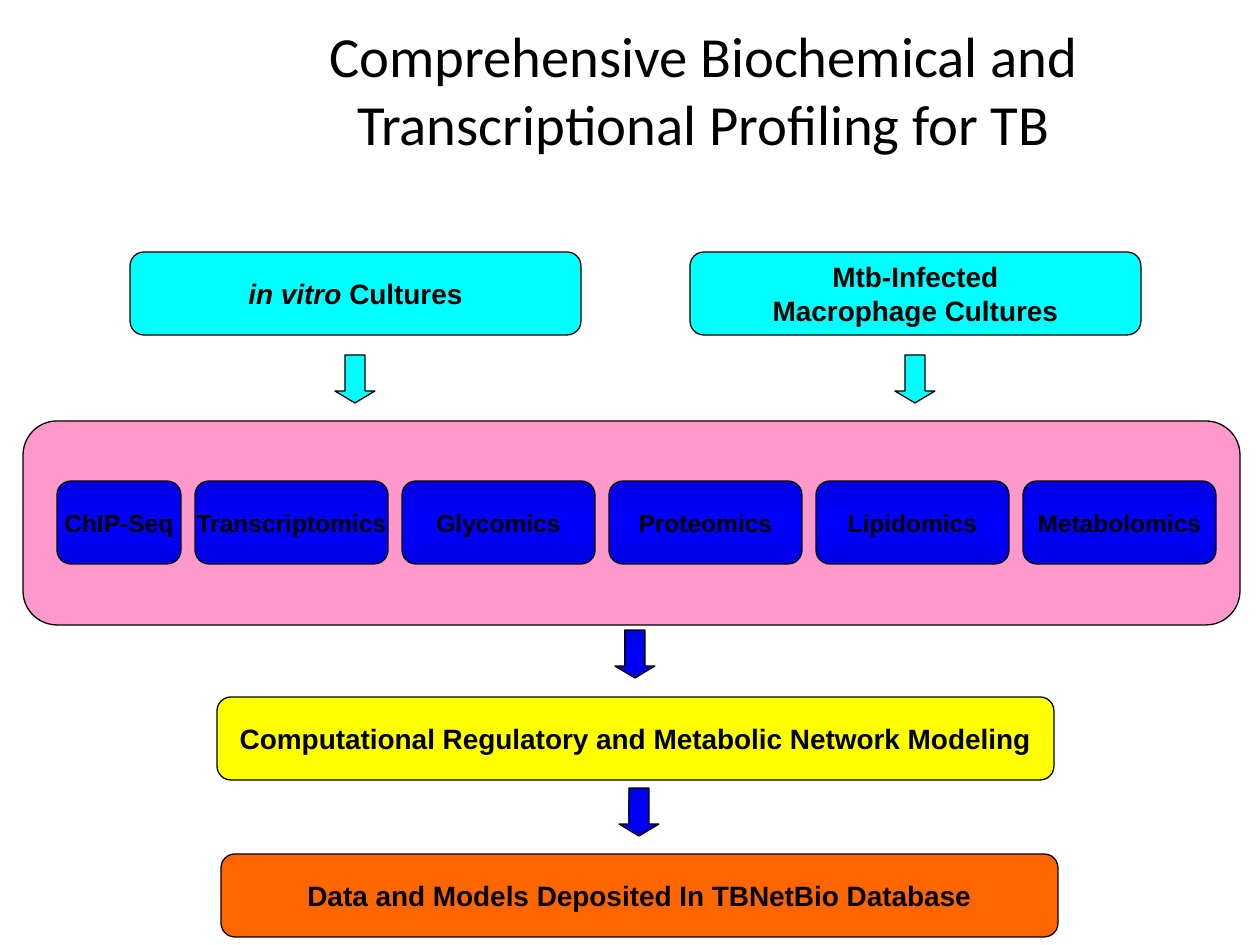
from copy import deepcopy
from dataclasses import dataclass

from pptx import Presentation
from pptx import util as u
from pptx.dml.color import RGBColor
from pptx.enum import shapes, text

EMU_PER_PX = 914400 // 126
BOX_HEIGHT = 83


@dataclass(frozen=True)
class Theme:
    ink: str = "000000"
    culture: str = "00FFFF"
    panel: str = "FF99CC"
    modeling: str = "FFFF00"
    database: str = "FF6600"
    assay: tuple = ("0000E2", "0000FF", "0000E2")
    flow: tuple = ("0000E0", "0000FF", "0000E0")
    title_font: str = "Calibri"
    body_font: str = "Arial"
    title_size: float = 32.4
    box_size: int = 16
    assay_size: int = 14
    line_width: float = 0.75


THEME = Theme()


def px(length):
    return u.Emu(length * EMU_PER_PX)


def rgb(value):
    return RGBColor.from_string(value)


def set_gradient(shape, colors):
    """Fill with three evenly spaced colours from top to bottom."""
    shape.fill.gradient()
    shape.fill.gradient_angle = 90
    stop_list = shape._element.xpath("./p:spPr/a:gradFill/a:gsLst")[0]
    stop_list.insert(1, deepcopy(stop_list[0]))
    for index, (stop, color) in enumerate(zip(shape.fill.gradient_stops, colors)):
        stop.color.rgb = rgb(color)
        stop.position = index / 2


def add_preset(slide, kind, box, fill, adjustments):
    shape = slide.shapes.add_shape(kind, *map(px, box))
    shape.shadow.inherit = False
    for index, value in enumerate(adjustments):
        shape.adjustments[index] = value
    if isinstance(fill, tuple):
        set_gradient(shape, fill)
    else:
        shape.fill.solid()
        shape.fill.fore_color.rgb = rgb(fill)
    shape.line.color.rgb = rgb(THEME.ink)
    shape.line.width = u.Pt(THEME.line_width)
    return shape


def add_run(paragraph, words, font, size, bold=False, italic=False):
    run = paragraph.add_run()
    run.text = words
    run.font.name = font
    run.font.size = u.Pt(size)
    run.font.bold = bold
    run.font.italic = italic
    run.font.color.rgb = rgb(THEME.ink)


def add_box(slide, box, fill, lines=(), size=THEME.box_size):
    """Add a rounded box; each line is a list of (words, italic) runs."""
    shape = add_preset(slide, shapes.MSO_SHAPE.ROUNDED_RECTANGLE, box, fill, [0.167])
    frame = shape.text_frame
    frame.word_wrap = False
    frame.vertical_anchor = text.MSO_ANCHOR.MIDDLE
    for index, line in enumerate(lines):
        paragraph = frame.add_paragraph() if index else frame.paragraphs[0]
        paragraph.alignment = text.PP_ALIGN.CENTER
        for words, italic in line:
            add_run(paragraph, words, THEME.body_font, size, bold=True, italic=italic)


def add_down_arrow(slide, center, top, fill):
    box = (center - 20, top, 40, 48)
    add_preset(slide, shapes.MSO_SHAPE.DOWN_ARROW, box, fill, [0.5, 0.298])


def set_title(slide, words):
    title = slide.shapes.title
    title.left, title.top, title.width, title.height = map(px, (168, 10, 1071, 158))
    frame = title.text_frame
    frame.word_wrap = True
    frame.auto_size = text.MSO_AUTO_SIZE.NONE
    frame.vertical_anchor = text.MSO_ANCHOR.MIDDLE
    paragraph = frame.paragraphs[0]
    paragraph.alignment = text.PP_ALIGN.CENTER
    add_run(paragraph, words, THEME.title_font, THEME.title_size)


def add_cultures(slide):
    width = 451
    cultures = [
        (130, [[("in vitro", True), (" Cultures", False)]]),
        (690, [[("Mtb-Infected", False)], [("Macrophage Cultures", False)]]),
    ]
    for left, lines in cultures:
        add_box(slide, (left, 252, width, BOX_HEIGHT), THEME.culture, lines)
        add_down_arrow(slide, left + width // 2, 355, THEME.culture)


def add_assays(slide):
    add_box(slide, (23, 421, 1217, 204), THEME.panel)
    assays = ["ChIP-Seq", "Transcriptomics", "Glycomics",
              "Proteomics", "Lipidomics", "Metabolomics"]
    left, gap = 57, 14
    for index, name in enumerate(assays):
        width = 193 if index else 124
        add_box(slide, (left, 481, width, BOX_HEIGHT), THEME.assay,
                [[(name, False)]], THEME.assay_size)
        left += width + gap


def add_outcomes(slide):
    outcomes = [
        (217, 697, 630, THEME.modeling,
         "Computational Regulatory and Metabolic Network Modeling"),
        (221, 854, 788, THEME.database,
         "Data and Models Deposited In TBNetBio Database"),
    ]
    width = 837
    for left, top, arrow_top, fill, words in outcomes:
        add_box(slide, (left, top, width, BOX_HEIGHT), fill, [[(words, False)]])
        add_down_arrow(slide, left + width // 2, arrow_top, THEME.flow)


def main():
    presentation = Presentation()
    presentation.slide_width = u.Inches(10)
    presentation.slide_height = u.Inches(7.5)
    slide = presentation.slides.add_slide(presentation.slide_layouts[5])
    set_title(slide, "Comprehensive Biochemical and Transcriptional Profiling for TB")
    add_cultures(slide)
    add_assays(slide)
    add_outcomes(slide)
    presentation.save("out.pptx")


if __name__ == "__main__":
    main()
